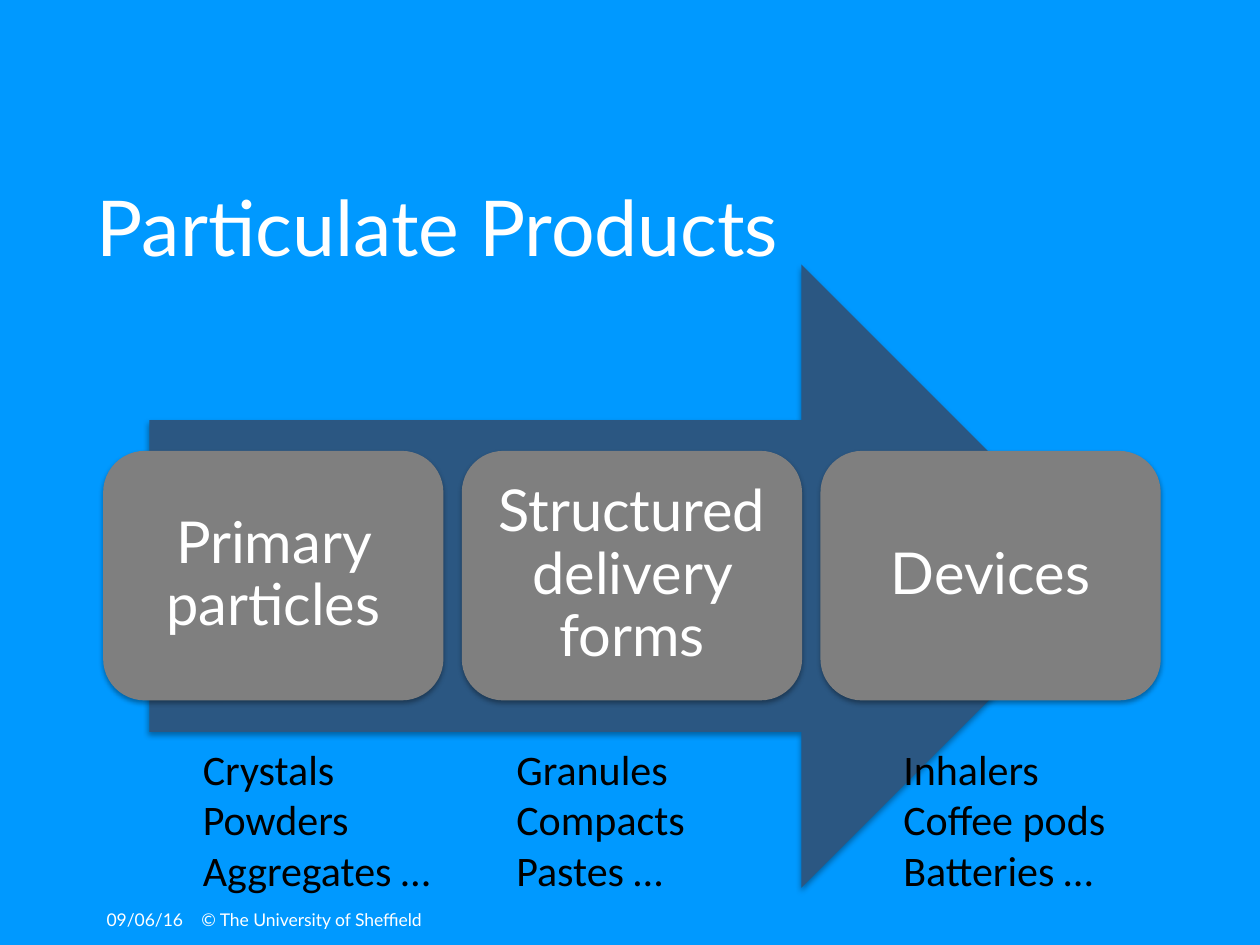
from dataclasses import dataclass

from lxml.etree import SubElement
from pptx import Presentation
from pptx.dml.color import RGBColor
from pptx.enum.shapes import MSO_SHAPE as Preset
from pptx.enum.text import MSO_ANCHOR as Anchor, MSO_AUTO_SIZE as AutoSize, PP_ALIGN as Align
from pptx.oxml.ns import qn
from pptx.shapes.autoshape import Shape
from pptx.slide import Slide
from pptx.text.text import TextFrame
from pptx.util import Cm, Pt

SKY, NAVY, GREY, WHITE, BLACK = "0099FF", "2B5782", "7F7F7F", "FFFFFF", "000000"
CARD_LEFT, CARD_TOP, CARD_PITCH = 2.08, 9.09, 7.23
CARD_WIDTH, CARD_HEIGHT = 6.86, 5.03


@dataclass
class Stage:
    name: str
    examples: list[str]
    examples_left: float
    examples_width: float


@dataclass
class Footer:
    text: str
    left: float
    width: float


STAGES = [
    Stage("Primary particles", ["Crystals", "Powders", "Aggregates …"], 3.84, 5.18),
    Stage("Structured delivery forms", ["Granules", "Compacts", "Pastes …"], 10.16, 3.94),
    Stage("Devices", ["Inhalers", "Coffee pods", "Batteries …"], 17.96, 4.65),
]
FOOTERS = [
    Footer("09/06/16", 1.9, 2.54),
    Footer("© The University of Sheffield", 3.81, 14.4),
]


def colour(value: str) -> RGBColor:
    return RGBColor.from_string(value)


def write(frame: TextFrame, text: str, size: float, font: str, value: str,
          align: Align = Align.LEFT, spacing: float = 1.0) -> None:
    frame.text = text
    for para in frame.paragraphs:
        para.alignment = align
        para.line_spacing = spacing
        for span in para.runs:
            span.font.size = Pt(size)
            span.font.name = font
            span.font.color.rgb = colour(value)


def add_shadow(shape: Shape) -> None:
    shape.shadow.inherit = False
    effects = shape.element.spPr.find(qn("a:effectLst"))
    shadow = SubElement(effects, qn("a:outerShdw"), blurRad=str(Pt(3.1)),
                        dist=str(Pt(1.8)), dir="5400000", rotWithShape="0")
    shade = SubElement(shadow, qn("a:srgbClr"), val=BLACK)
    SubElement(shade, qn("a:alpha"), val="35000")


def add_block(page: Slide, preset: Preset, left: float, top: float,
              width: float, height: float, fill: str) -> Shape:
    shape = page.shapes.add_shape(preset, Cm(left), Cm(top), Cm(width), Cm(height))
    shape.fill.solid()
    shape.fill.fore_color.rgb = colour(fill)
    shape.line.fill.background()
    add_shadow(shape)
    return shape


def add_text(page: Slide, text: str, left: float, top: float, width: float,
             height: float, size: float, font: str, value: str) -> TextFrame:
    box = page.shapes.add_textbox(Cm(left), Cm(top), Cm(width), Cm(height))
    write(box.text_frame, text, size, font, value)
    return box.text_frame


def add_card(page: Slide, index: int, stage: Stage) -> None:
    card = add_block(page, Preset.ROUNDED_RECTANGLE, CARD_LEFT + index * CARD_PITCH,
                     CARD_TOP, CARD_WIDTH, CARD_HEIGHT, GREY)
    frame = card.text_frame
    frame.word_wrap = True
    frame.vertical_anchor = Anchor.MIDDLE
    frame.margin_left = frame.margin_right = Cm(0.36)
    frame.margin_top = frame.margin_bottom = Cm(0.36)
    write(frame, stage.name, 33, "Lato", WHITE, Align.CENTER, 0.9)


def add_examples(page: Slide, stage: Stage) -> None:
    frame = add_text(page, "\n".join(stage.examples), stage.examples_left, 14.86,
                     stage.examples_width, 3.33, 24, "Calibri", BLACK)
    frame.word_wrap = False
    frame.auto_size = AutoSize.SHAPE_TO_FIT_TEXT


def main() -> None:
    deck = Presentation()
    deck.slide_width, deck.slide_height = Cm(25.4), Cm(19.05)
    page = deck.slides.add_slide(deck.slide_layouts[5])
    page.background.fill.solid()
    page.background.fill.fore_color.rgb = colour(SKY)

    # Title
    title = page.shapes.title
    title.left, title.top, title.width, title.height = Cm(1.7), Cm(3.81), Cm(22.86), Cm(2.11)
    title.text_frame.vertical_anchor = Anchor.TOP
    title.text_frame.auto_size = AutoSize.NONE
    write(title.text_frame, "Particulate Products", 44, "Lato", WHITE, spacing=0.83)

    # Date and copyright line
    for footer in FOOTERS:
        frame = add_text(page, footer.text, footer.left, 18.2, footer.width, 0.85,
                         10, "Lato", WHITE)
        frame.word_wrap = True

    # Process arrow with its three stages
    add_block(page, Preset.RIGHT_ARROW, 3.01, 5.33, 19.43, 12.57, NAVY)
    for index, stage in enumerate(STAGES):
        add_card(page, index, stage)

    # Examples under each stage
    for stage in STAGES:
        add_examples(page, stage)

    deck.save("out.pptx")


if __name__ == "__main__":
    main()
